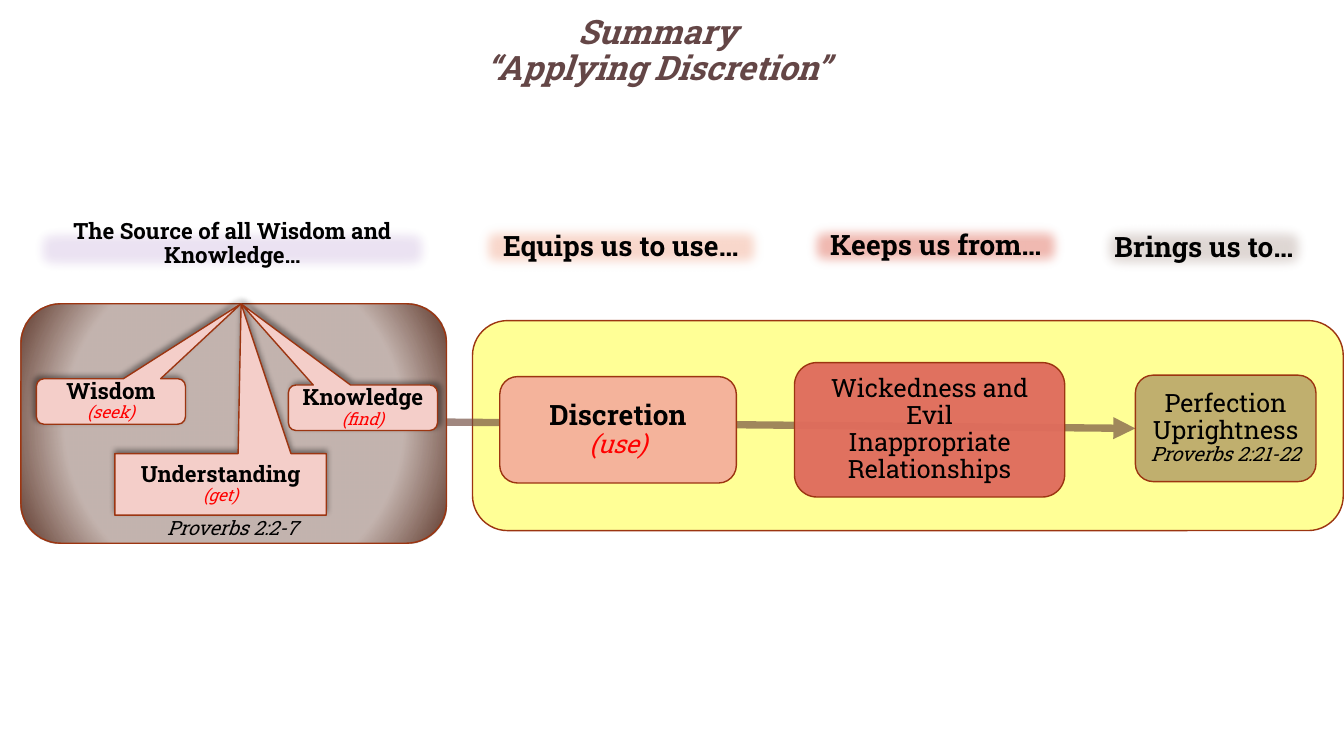
import pptx
import pptx.util
import pptx.dml.color
import pptx.enum.shapes
import pptx.enum.text
import pptx.oxml
import pptx.oxml.ns
from lxml import etree

Pt = pptx.util.Pt
RGB = pptx.dml.color.RGBColor.from_string
KIND = pptx.enum.shapes.MSO_SHAPE
ANCHOR = pptx.enum.text.MSO_ANCHOR
qn = pptx.oxml.ns.qn

FONT = "Roboto Slab"
COLORS = {
    "black": "000000", "red": "FF0000", "title": "644646", "edge": "9C3511",
    "yellow": "FFFF00", "brown": "704A3D", "dark": "684539", "violet": "7030A0",
    "coral": "DF6C5D", "peach": "F4B39B", "pink": "F4CEC9",
}
TIGHT, LOOSE = (3, 1.5), (4.5, 2)

# Each text line: words, size, style letters (b, i), colour
TITLE = [("Summary", 24, "bi", "title"),
         ("“Applying Discretion”", 24, "bi", "title")]
VERSE = [("Proverbs 2:2-7", 14, "i", "black")]

# words, size, box, colour, opacity, anchor, insets
HEADS = [
    ("The Source of all Wisdom and Knowledge…", 16, (18.5, 156, 295, 44),
     "violet", 14, ANCHOR.TOP, TIGHT),
    ("Equips us to use…", 20, (337.5, 155.5, 212, 42),
     "peach", 50, ANCHOR.MIDDLE, LOOSE),
    ("Keeps us from…", 20, (572, 155, 193, 42),
     "coral", 48, ANCHOR.MIDDLE, TIGHT),
    ("Brings us to…", 20, (780.5, 155, 159, 44.5),
     "brown", 22, ANCHOR.MIDDLE, TIGHT),
]

# box, colour, opacity, insets, lines
STEPS = [
    ((357, 269, 169, 76), "peach", 100, LOOSE,
     [("Discretion", 20, "b", "black"), ("(use)", 18, "i", "red")]),
    ((567.5, 259, 193, 96), "coral", 96, TIGHT,
     [("Wickedness and Evil", 18, "", "black"),
      ("Inappropriate Relationships", 18, "", "black")]),
    ((811, 268, 129, 76), "brown", 44, TIGHT,
     [("Perfection", 18, "", "black"), ("Uprightness", 18, "", "black"),
      ("Proverbs 2:21-22", 14, "i", "black")]),
]

# word, hint, kind, box, shadow angle
CALLS = [
    ("Understanding", "(get)", KIND.RECTANGULAR_CALLOUT,
     (82, 324, 151, 44), 270),
    ("Wisdom", "(seek)", KIND.ROUNDED_RECTANGULAR_CALLOUT,
     (26, 270.5, 106.5, 32.5), 225),
    ("Knowledge", "(find)", KIND.ROUNDED_RECTANGULAR_CALLOUT,
     (206, 275, 106.5, 32.5), 315),
]
TIP = (172.2, 217)
SOURCE = (15, 217, 304, 171)
FRAME = (337.5, 229, 622, 150)
ARROW = (319, 301.5, 811, 306)


def node(parent, tag, **attrs):
    item = etree.SubElement(parent, qn(tag))
    for key, value in attrs.items():
        item.set(key, str(value))
    return item


def tint(parent, color, alpha):
    """Add a colour element with an opacity in percent."""
    item = node(parent, "a:srgbClr", val=COLORS[color])
    if alpha < 100:
        node(item, "a:alpha", val=alpha * 1000)


def fade(fill, alpha):
    """Make a solid fill partly transparent."""
    if alpha < 100:
        color = fill._xPr.find(qn("a:solidFill"))[0]
        node(color, "a:alpha", val=alpha * 1000)


def write(shape, lines, insets=TIGHT, anchor=ANCHOR.MIDDLE):
    frame = shape.text_frame
    frame.word_wrap = True
    frame.auto_size = pptx.enum.text.MSO_AUTO_SIZE.NONE
    frame.vertical_anchor = anchor
    frame.margin_left = frame.margin_right = Pt(insets[0])
    frame.margin_top = frame.margin_bottom = Pt(insets[1])
    for i, (words, size, style, color) in enumerate(lines):
        para = frame.add_paragraph() if i else frame.paragraphs[0]
        para.text = words
        para.alignment = pptx.enum.text.PP_ALIGN.CENTER
        para.line_spacing = 0.9
        para.space_before = para.space_after = Pt(0)
        font = para.font
        font.name, font.size = FONT, Pt(size)
        font.bold, font.italic = "b" in style, "i" in style
        font.color.rgb = RGB(COLORS[color])


def draw(kind, box, color, alpha=100, edge=True):
    shape = slide.shapes.add_shape(kind, *map(Pt, box))
    shape.shadow.inherit = False
    shape.fill.solid()
    shape.fill.fore_color.rgb = RGB(COLORS[color])
    fade(shape.fill, alpha)
    if edge:
        shape.line.color.rgb = RGB(COLORS["edge"])
        shape.line.width = Pt(1)
    else:
        shape.line.fill.background()
    return shape


def effects(shape):
    return shape._element.spPr.find(qn("a:effectLst"))


def glow(shape):
    """Give the shape a radial gradient that darkens outwards."""
    solid = shape._element.spPr.find(qn("a:solidFill"))
    grad = etree.Element(qn("a:gradFill"))
    stops = node(grad, "a:gsLst")
    for pos, color, alpha in ((69, "brown", 41), (97, "dark", 100)):
        tint(node(stops, "a:gs", pos=pos * 1000), color, alpha)
    way = node(grad, "a:path", path="circle")
    node(way, "a:fillToRect", l=50000, t=50000, r=50000, b=50000)
    solid.getparent().replace(solid, grad)


def link(x1, y1, x2, y2):
    line = slide.shapes.add_connector(
        pptx.enum.shapes.MSO_CONNECTOR.STRAIGHT, *map(Pt, (x1, y1, x2, y2)))
    line.line.color.rgb = RGB(COLORS["brown"])
    line.line.width = Pt(5.25)
    fade(line.line.fill, 65)
    node(line.line._ln, "a:tailEnd", type="triangle")
    node(line._element.spPr, "a:effectLst")


def call(word, hint, kind, box, angle):
    """Draw a callout that points at the shared tip."""
    shape = draw(kind, box, "pink")
    for i in (0, 1):
        shape.adjustments[i] = (TIP[i] - box[i]) / box[i + 2] - 0.5
    shade = node(effects(shape), "a:outerShdw", blurRad=Pt(4), dist=Pt(3),
                 dir=angle * 60000, rotWithShape=0)
    tint(shade, "black", 40)
    write(shape, [(word, 16, "b", "black"), (hint, 12, "i", "red")], LOOSE)


deck = pptx.Presentation()
deck.slide_width, deck.slide_height = Pt(960), Pt(540)
slide = deck.slides.add_slide(deck.slide_layouts[5])

title = slide.shapes.title
title.left, title.top, title.width, title.height = map(Pt, (60, 9.5, 819, 61))
write(title, TITLE, anchor=ANCHOR.TOP)

draw(KIND.ROUNDED_RECTANGLE, FRAME, "yellow", 41)
link(*ARROW)
glow(draw(KIND.ROUNDED_RECTANGLE, SOURCE, "brown"))
verse = slide.shapes.add_textbox(*map(Pt, (112, 368.5, 108, 19)))
write(verse, VERSE, LOOSE)

for words, size, box, color, alpha, anchor, insets in HEADS:
    head = draw(KIND.RECTANGLE, box, color, alpha, edge=False)
    node(effects(head), "a:softEdge", rad=Pt(9))
    write(head, [(words, size, "b", "black")], insets, anchor)
for item in CALLS:
    call(*item)
for box, color, alpha, insets, lines in STEPS:
    write(draw(KIND.ROUNDED_RECTANGLE, box, color, alpha), lines, insets)

deck.save("out.pptx")
